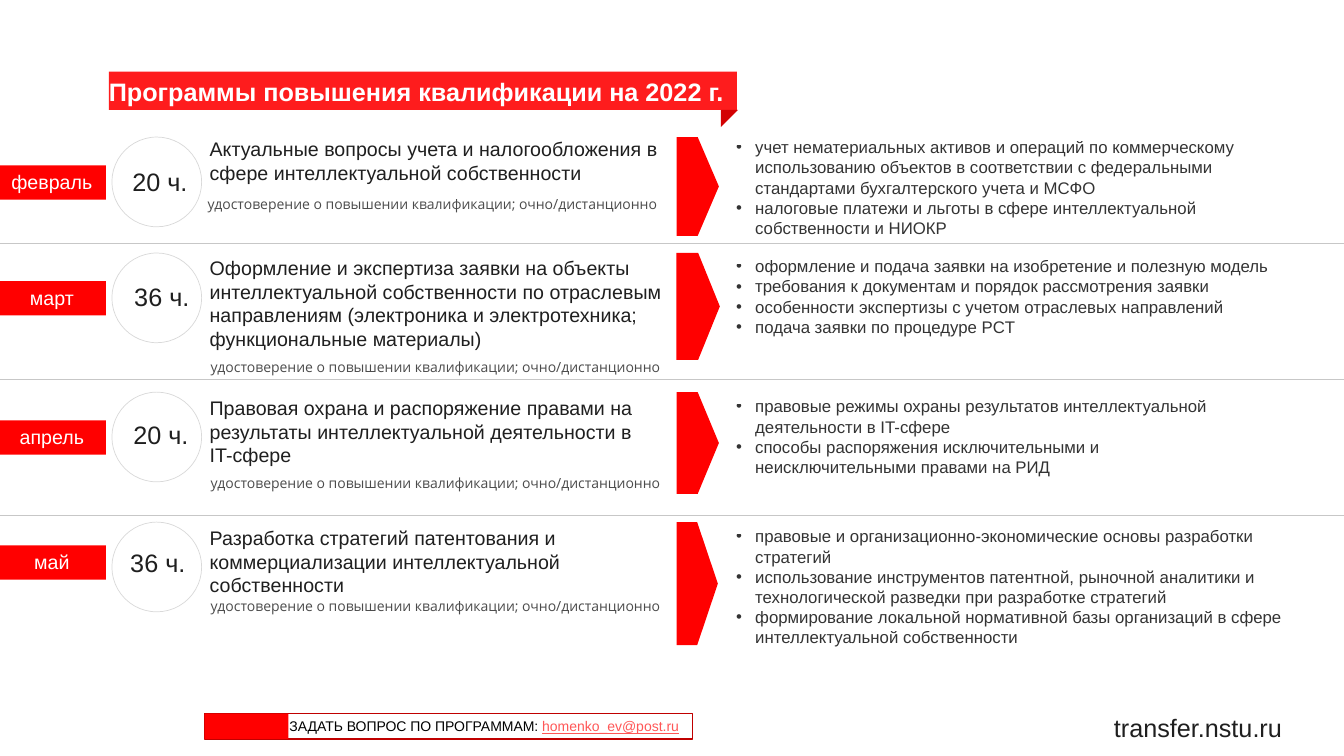
from collections import namedtuple

from lxml.etree import SubElement
from pptx import Presentation
from pptx.dml.color import RGBColor
from pptx.enum.shapes import MSO_SHAPE as Preset
from pptx.enum.text import MSO_ANCHOR as Anchor, MSO_AUTO_SIZE as AutoSize, PP_ALIGN as Align
from pptx.oxml.ns import qn
from pptx.util import Inches, Pt

RED = RGBColor(0xFF, 0x00, 0x00)
BANNER_RED = RGBColor(0xFE, 0x1C, 0x1D)
FOLD_RED = RGBColor(0xD3, 0x01, 0x02)
FRAME_RED = RGBColor(0xC0, 0x00, 0x00)
LINK_RED = RGBColor(0xFF, 0x57, 0x57)
WHITE = RGBColor(0xFF, 0xFF, 0xFF)
BLACK = RGBColor(0x00, 0x00, 0x00)
DARK = RGBColor(0x1F, 0x1F, 0x1F)
RING_GRAY = RGBColor(0xD9, 0xD9, 0xD9)
RULE_GRAY = RGBColor(0xC7, 0xC7, 0xC7)

FLUSH = (0, 0.05, 0, 0.05)
PADDED = (0.1, 0.05, 0.1, 0.05)
CERTIFICATE = "удостоверение о повышении квалификации; очно/дистанционно"

Program = namedtuple(
    "Program",
    "month month_top hours hours_at top text_top title title_width note_at arrow_size topics_width topics",
)

PROGRAMS = [
    Program(
        "февраль", 1.64, "20 ч.", (1.14, 1.6), 1.36, 1.31,
        "Актуальные вопросы учета и налогообложения в сфере интеллектуальной собственности",
        4.63, (2.06, 1.86), (0.42, 0.98), 5.45,
        ["учет нематериальных активов и операций по коммерческому использованию объектов "
         "в соответствии с федеральными стандартами бухгалтерского учета и МСФО",
         "налоговые платежи и льготы в сфере интеллектуальной собственности и НИОКР"],
    ),
    Program(
        "март", 2.79, "36 ч.", (1.16, 2.74), 2.51, 2.49,
        "Оформление и экспертиза заявки на объекты интеллектуальной собственности по отраслевым "
        "направлениям (электроника и электротехника; функциональные материалы)",
        4.63, (2.09, 3.47), (0.43, 1.06), 5.92,
        ["оформление и подача заявки на изобретение и полезную модель",
         "требования к документам и порядок рассмотрения заявки",
         "особенности экспертизы с учетом отраслевых направлений",
         "подача заявки по процедуре PCT"],
    ),
    Program(
        "апрель", 4.17, "20 ч.", (1.15, 4.11), 3.89, 3.88,
        "Правовая охрана и распоряжение правами на результаты интеллектуальной деятельности в IT-сфере",
        4.43, (2.09, 4.62), (0.42, 1.01), 5.22,
        ["правовые режимы охраны результатов интеллектуальной деятельности в IT-сфере",
         "способы распоряжения исключительными и неисключительными правами на РИД"],
    ),
    Program(
        "май", 5.41, "36 ч.", (1.12, 5.38), 5.18, 5.17,
        "Разработка стратегий патентования и коммерциализации интеллектуальной собственности",
        4.63, (2.09, 5.85), (0.41, 1.22), 5.45,
        ["правовые и организационно-экономические основы разработки стратегий",
         "использование инструментов патентной, рыночной аналитики и технологической разведки "
         "при разработке стратегий",
         "формирование локальной нормативной базы организаций в сфере интеллектуальной собственности"],
    ),
]


def set_all(target, values):
    for name, value in values.items():
        setattr(target, name, value)


def add_run(paragraph, text, size, color, opacity=None, name="Arial", **style):
    run = paragraph.add_run()
    run.text = text
    set_all(run.font, {"size": Pt(size), "name": name, **style})
    run.font.color.rgb = color
    if opacity:
        rgb = run._r.rPr.find(".//" + qn("a:srgbClr"))
        SubElement(rgb, qn("a:alpha")).set("val", str(opacity * 1000))


def set_frame(shape, insets=PADDED, anchor=Anchor.TOP, auto_size=AutoSize.NONE):
    left, top, right, bottom = map(Inches, insets)
    set_all(shape.text_frame, {
        "word_wrap": True, "vertical_anchor": anchor, "auto_size": auto_size,
        "margin_left": left, "margin_top": top, "margin_right": right, "margin_bottom": bottom,
    })
    return shape.text_frame.paragraphs[0]


def add_figure(slide, preset, box, fill=None, line=None, line_width=0.5):
    shape = slide.shapes.add_shape(preset, *map(Inches, box))
    shape.shadow.inherit = False
    if fill is None:
        shape.fill.background()
    else:
        shape.fill.solid()
        shape.fill.fore_color.rgb = fill
    if line is None:
        shape.line.fill.background()
    else:
        shape.line.color.rgb = line
        shape.line.width = Pt(line_width)
    return shape


def add_text(slide, box, text, size, insets=FLUSH, align=Align.LEFT, spacing=None, **style):
    shape = slide.shapes.add_textbox(*map(Inches, box))
    paragraph = set_frame(shape, insets, auto_size=AutoSize.SHAPE_TO_FIT_TEXT)
    set_all(paragraph, {"alignment": align, "line_spacing": spacing})
    add_run(paragraph, text, size, DARK, **style)


def add_topics(slide, box, topics):
    shape = slide.shapes.add_textbox(*map(Inches, box))
    paragraph = set_frame(shape, FLUSH, auto_size=AutoSize.SHAPE_TO_FIT_TEXT)
    for index, topic in enumerate(topics):
        if index:
            paragraph = shape.text_frame.add_paragraph()
        properties = paragraph._p.get_or_add_pPr()
        properties.set("marL", str(Inches(0.19)))
        properties.set("indent", str(Inches(-0.19)))
        SubElement(properties, qn("a:buFont")).set("typeface", "Arial")
        SubElement(properties, qn("a:buChar")).set("char", "•")
        add_run(paragraph, topic, 12, BLACK, opacity=80)


def add_month(slide, top, month):
    shape = add_figure(slide, Preset.RECTANGLE, (-0.02, top, 1.07, 0.34), RED)
    paragraph = set_frame(shape, auto_size=AutoSize.SHAPE_TO_FIT_TEXT)
    paragraph.alignment = Align.CENTER
    add_run(paragraph, month, 14, WHITE)


def add_program(slide, program):
    add_month(slide, program.month_top, program.month)
    add_figure(slide, Preset.OVAL, (1.11, program.top, 0.89, 0.89), line=RING_GRAY)
    add_text(slide, (*program.hours_at, 0.89, 0.4), program.hours, 18, PADDED, Align.CENTER)
    add_text(slide, (2.08, program.text_top, program.title_width, 0.81), program.title, 14)
    add_text(slide, (*program.note_at, 4.49, 0.29), CERTIFICATE, 10,
             spacing=1.2, name="Open Sans", opacity=80)
    add_figure(slide, Preset.PENTAGON, (6.71, program.top, *program.arrow_size), RED)
    add_topics(slide, (7.3, program.text_top, program.topics_width, 1.11), program.topics)


def add_banner(slide):
    banner = add_figure(slide, Preset.RECTANGLE, (1.08, 0.71, 6.23, 0.38), BANNER_RED)
    paragraph = set_frame(banner, (0, 0.07, 0, 0.05), Anchor.MIDDLE)
    paragraph.alignment = Align.LEFT
    add_run(paragraph, "Программы повышения квалификации на 2022 г.", 18, WHITE, bold=True)
    fold = add_figure(slide, Preset.RIGHT_TRIANGLE, (7.15, 1.09, 0.17, 0.17), FOLD_RED)
    fold.rotation = 90


def add_contact(slide):
    frame = add_figure(slide, Preset.RECTANGLE, (2.03, 7.08, 4.84, 0.25), WHITE, FRAME_RED, 1)
    paragraph = set_frame(frame, anchor=Anchor.MIDDLE)
    paragraph.alignment = Align.RIGHT
    add_run(paragraph, "ЗАДАТЬ ВОПРОС ПО ПРОГРАММАМ: ", 10, BLACK)
    add_run(paragraph, "homenko_ev@post.ru", 10, LINK_RED, underline=True)
    add_run(paragraph, " ", 10, BLACK)
    add_figure(slide, Preset.RECTANGLE, (2.03, 7.08, 0.83, 0.25), RED)


def main():
    presentation = Presentation()
    set_all(presentation, {"slide_width": Inches(13.33), "slide_height": Inches(7.5)})
    slide = presentation.slides.add_slide(presentation.slide_layouts[6])
    add_text(slide, (10.95, 7.02, 2, 0.4), "transfer.nstu.ru", 18, PADDED)
    add_banner(slide)
    for program in PROGRAMS:
        add_program(slide, program)
    for top in (2.41, 3.76):
        add_figure(slide, Preset.RECTANGLE, (-0.02, top, 13.53, 1.35), line=RULE_GRAY)
    add_contact(slide)
    presentation.save("out.pptx")


if __name__ == "__main__":
    main()
